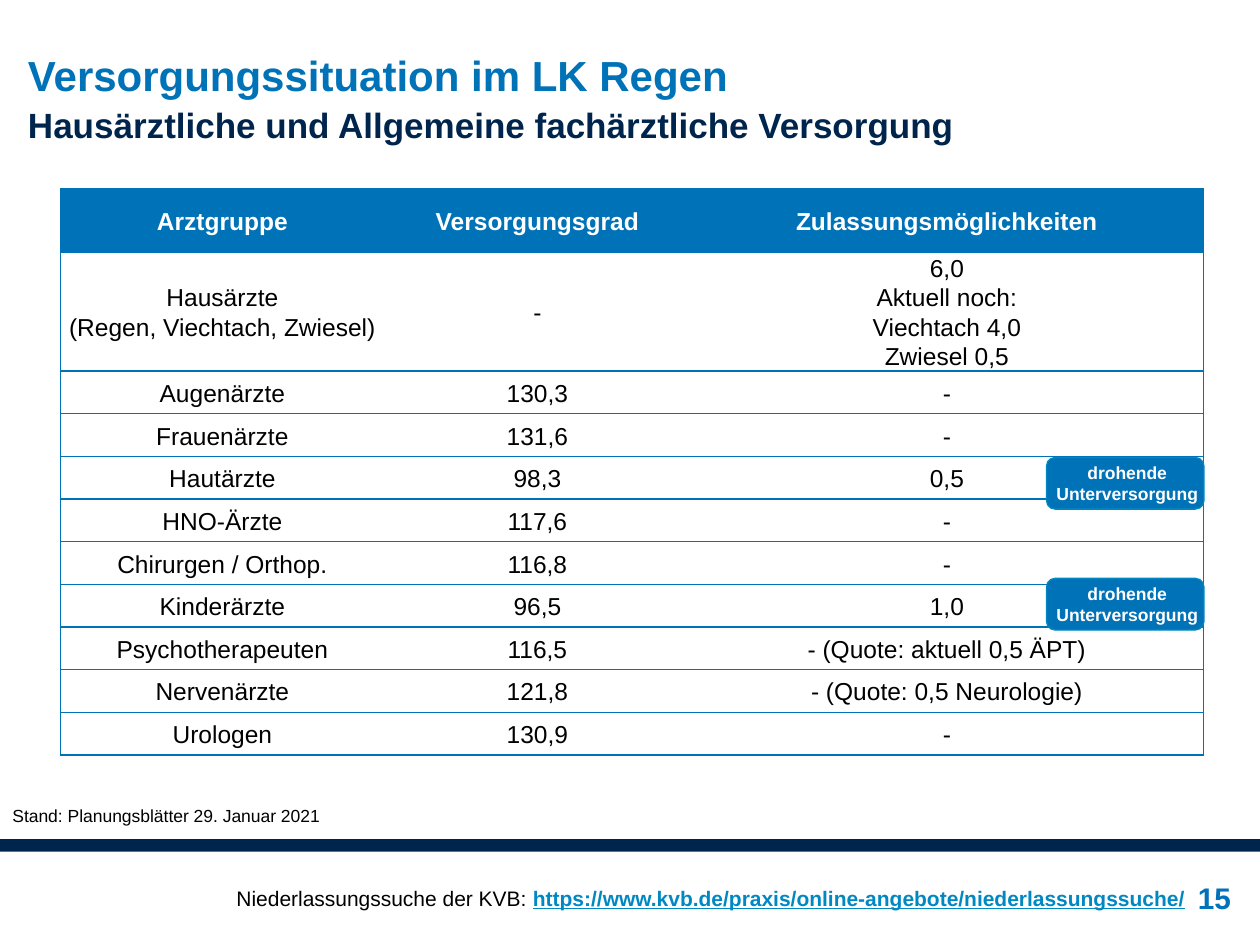
from lxml import etree
from pptx import Presentation
from pptx.dml.color import RGBColor
from pptx.enum import shapes, text as t
from pptx.oxml import ns
from pptx.util import Pt

COLORS = {"blue": "0072B7", "navy": "00254D", "link": "0088C3",
          "black": "000000", "white": "FFFFFF"}
FONT = "Arial"
HEADER = ("Arztgruppe", "Versorgungsgrad", "Zulassungsmöglichkeiten")
GROUPS = [
    ("Hausärzte\n(Regen, Viechtach, Zwiesel)", "-",
     "6,0\nAktuell noch:\nViechtach 4,0\nZwiesel 0,5"),
    ("Augenärzte", "130,3", "-"),
    ("Frauenärzte", "131,6", "-"),
    ("Hautärzte", "98,3", "0,5"),
    ("HNO-Ärzte", "117,6", "-"),
    ("Chirurgen / Orthop.", "116,8", "-"),
    ("Kinderärzte", "96,5", "1,0"),
    ("Psychotherapeuten", "116,5", "- (Quote: aktuell 0,5 ÄPT)"),
    ("Nervenärzte", "121,8", "- (Quote: 0,5 Neurologie)"),
    ("Urologen", "130,9", "-"),
]
COLUMN_WIDTHS = (185, 175, 293)
ROW_HEIGHTS = (36, 68) + (24.4,) * 9


def rgb(name):
    return RGBColor.from_string(COLORS[name])


def points(*values):
    return [Pt(value) for value in values]


def write(frame, content, size, color="black", bold=False, underline=False,
          align=t.PP_ALIGN.LEFT, spacing=None):
    """Append to the last paragraph; each newline starts another one."""
    for index, line in enumerate(content.split("\n")):
        paragraph = frame.add_paragraph() if index else frame.paragraphs[-1]
        paragraph.alignment = align
        if spacing:
            paragraph.line_spacing = spacing
        run = paragraph.add_run()
        run.text = line
        font = run.font
        font.name, font.size = FONT, Pt(size)
        font.bold, font.underline = bold, underline
        font.color.rgb = rgb(color)


def set_frame(frame, insets=(7.2, 3.6, 7.2, 3.6), anchor=t.MSO_ANCHOR.TOP):
    frame.word_wrap = True
    frame.auto_size = t.MSO_AUTO_SIZE.NONE
    frame.vertical_anchor = anchor
    (frame.margin_left, frame.margin_top,
     frame.margin_right, frame.margin_bottom) = points(*insets)
    return frame


def add_text_box(slide, box, **layout):
    return set_frame(slide.shapes.add_textbox(*points(*box)).text_frame, **layout)


def add_block(slide, kind, box, fill, line=None):
    block = slide.shapes.add_shape(kind, *points(*box))
    block.shadow.inherit = False
    block.fill.solid()
    block.fill.fore_color.rgb = rgb(fill)
    if line:
        block.line.color.rgb = rgb(line)
        block.line.width = Pt(0.75)
    else:
        block.line.fill.background()
    return block


def place_title(slide, box):
    title = slide.shapes.title
    title.left, title.top, title.width, title.height = points(*box)
    frame = set_frame(title.text_frame, insets=(0, 0, 0, 0))
    write(frame, "Versorgungssituation im LK Regen", 24, "blue", bold=True, spacing=1.1)
    frame.paragraphs[0].add_line_break()
    write(frame, "Hausärztliche und Allgemeine fachärztliche Versorgung", 20,
          "navy", bold=True, spacing=1.1)


def set_borders(cell, sides):
    """Draw the given sides (of L, R, T, B) and blank the others."""
    properties = cell._tc.get_or_add_tcPr()
    for side in "LRTB":
        line = etree.SubElement(properties, ns.qn(f"a:ln{side}"), w=str(Pt(1)))
        if side in sides:
            fill = etree.SubElement(line, ns.qn("a:solidFill"))
            etree.SubElement(fill, ns.qn("a:srgbClr"), val=COLORS["blue"])
        else:
            etree.SubElement(line, ns.qn("a:noFill"))


def place_care_table(slide, left, top):
    rows = [HEADER] + GROUPS
    size = sum(COLUMN_WIDTHS), sum(ROW_HEIGHTS)
    table = slide.shapes.add_table(len(rows), len(HEADER),
                                   *points(left, top, *size)).table
    for column, width in zip(table.columns, COLUMN_WIDTHS):
        column.width = Pt(width)
    for row, height in zip(table.rows, ROW_HEIGHTS):
        row.height = Pt(height)
    for r, values in enumerate(rows):
        for c, value in enumerate(values):
            cell = table.cell(r, c)
            set_borders(cell, "TB" + ("L", "", "R")[c])
            cell.fill.solid()
            cell.fill.fore_color.rgb = rgb("white" if r else "blue")
            cell.vertical_anchor = t.MSO_ANCHOR.MIDDLE
            (cell.margin_left, cell.margin_top,
             cell.margin_right, cell.margin_bottom) = points(0.7, 0.7, 0.7, 0)
            write(cell.text_frame, value, 14, "black" if r else "white",
                  bold=r == 0, align=t.PP_ALIGN.CENTER, spacing=1.07)


def place_warning(slide, box):
    badge = add_block(slide, shapes.MSO_SHAPE.ROUNDED_RECTANGLE, box, "blue", "link")
    frame = set_frame(badge.text_frame, (2.2, 0, 0, 0), t.MSO_ANCHOR.MIDDLE)
    write(frame, "drohende Unterversorgung", 10, "white", bold=True,
          align=t.PP_ALIGN.CENTER)


def place_footer(slide, top):
    """Source date above the bar, search link and page number below it."""
    add_block(slide, shapes.MSO_SHAPE.RECTANGLE, (0, top, 720, 7.2), "navy")
    write(add_text_box(slide, (0, top - 23, 245, 19.4)),
          "Stand: Planungsblätter 29. Januar 2021", 10)
    search = add_text_box(slide, (128, top + 23, 641.5, 44))
    write(search, "Niederlassungssuche der KVB: ", 12)
    write(search, "https://www.kvb.de/praxis/online-angebote/niederlassungssuche/",
          12, "link", bold=True, underline=True)
    number = add_text_box(slide, (666, top + 6.5, 37.5, 54), insets=(2.2, 0, 0, 0),
                          anchor=t.MSO_ANCHOR.MIDDLE)
    write(number, "15", 17, "blue", bold=True, align=t.PP_ALIGN.RIGHT)


def main():
    deck = Presentation()
    deck.slide_width, deck.slide_height = points(720, 540)
    slide = deck.slides.add_slide(deck.slide_layouts.get_by_name("Title Only"))
    place_title(slide, (16, 25.2, 605, 36))
    place_care_table(slide, 34.6, 108)
    place_footer(slide, 479.5)
    for top in (330.5, 261.4):
        place_warning(slide, (598, top, 90, 29.5))
    deck.save("out.pptx")


if __name__ == "__main__":
    main()
